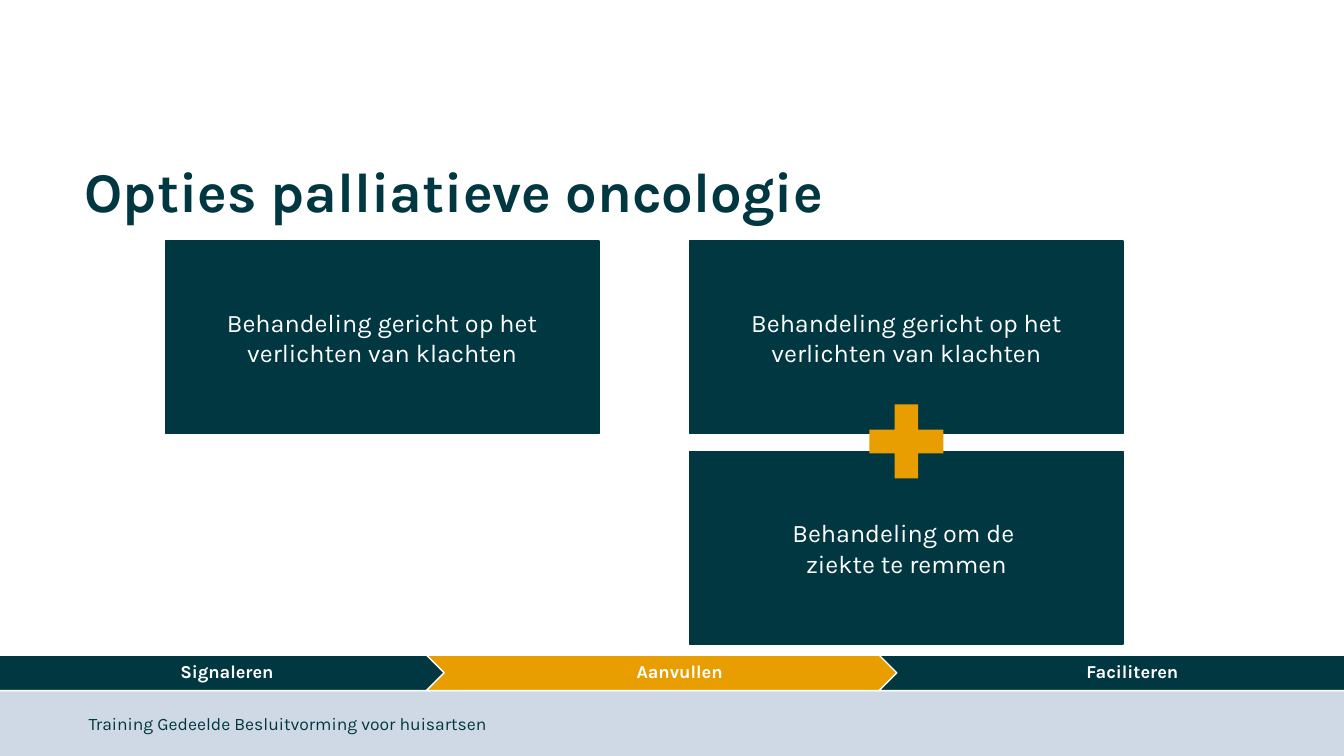
from pptx import Presentation
from pptx.dml.color import RGBColor
from pptx.enum.shapes import MSO_SHAPE
from pptx.enum.text import MSO_ANCHOR, PP_ALIGN
from pptx.util import Inches, Pt

RECT, PLUS, CHEVRON = MSO_SHAPE.RECTANGLE, MSO_SHAPE.MATH_PLUS, MSO_SHAPE.CHEVRON
LEFT, CENTER, MIDDLE = PP_ALIGN.LEFT, PP_ALIGN.CENTER, MSO_ANCHOR.MIDDLE
WIDE, HIGH = 13.33, 7.5
DARK, GOLD, PALE, WHITE, INK = "003741", "E89E00", "CED9E5", "FFFFFF", "00373E"
COLS, ROWS = (1.64, 6.84), (2.39, 4.48)
CARD_W, CARD_H = 4.3, 1.91
RELIEF = ["Behandeling gericht op het verlichten van klachten"]
SLOW = ["Behandeling om de ", "ziekte te remmen"]
STEPS = [("Signaleren", DARK), ("Aanvullen", GOLD), ("Faciliteren", DARK)]


def tint(color, code):
    """Set a colour from a hex string."""
    color.rgb = RGBColor.from_string(code)


def write(shape, lines, size, code, align=LEFT, bold=False, gap=1.0):
    """Put styled lines of text in a shape."""
    frame = shape.text_frame
    frame.word_wrap = True
    frame.vertical_anchor = MIDDLE
    frame.text = "\n".join(lines)
    for para in frame.paragraphs:
        para.alignment = align
        para.line_spacing = gap
        font = para.font
        font.name, font.size, font.bold = "Karla", Pt(size), bold
        tint(font.color, code)


def draw(slide, kind, box, fill, line=None):
    """Add a flat preset shape and return it."""
    shape = slide.shapes.add_shape(kind, *map(Inches, box))
    shape.shadow.inherit = False
    shape.fill.solid()
    tint(shape.fill.fore_color, fill)
    if line:
        tint(shape.line.color, line)
        shape.line.width = Pt(1)
    else:
        shape.line.fill.background()
    return shape


def head(slide, text):
    """Place and style the slide title."""
    title = slide.shapes.title
    title.left, title.top, title.width, title.height = map(
        Inches, (0.74, 1.2, 11.77, 1.45))
    write(title, [text], 40, DARK, bold=True, gap=0.9)


def card(slide, col, row, lines):
    """Add an option card at a grid place."""
    box = (COLS[col], ROWS[row], CARD_W, CARD_H)
    write(draw(slide, RECT, box, DARK, DARK), lines, 18, WHITE, CENTER)


def track(slide, top):
    """Add the row of step chevrons."""
    for i, (label, fill) in enumerate(STEPS):
        step = draw(slide, CHEVRON, (-0.26 + 4.49 * i, top, 4.98, 0.35), fill, WHITE)
        frame = step.text_frame
        frame.margin_left = Inches(0.06)
        frame.margin_right = frame.margin_top = frame.margin_bottom = Inches(0.02)
        write(step, [label], 13, WHITE, CENTER, True, 0.9)


def foot(slide, text):
    """Add the footer text."""
    box = slide.shapes.add_textbox(*map(Inches, (0.78, 6.98, 4.5, 0.4)))
    write(box, [text], 12.5, INK)


def main():
    """Build and save the slide."""
    deck = Presentation()
    deck.slide_width, deck.slide_height = Inches(WIDE), Inches(HIGH)
    slide = deck.slides.add_slide(deck.slide_layouts[5])
    draw(slide, RECT, (0, 6.86, WIDE, HIGH - 6.86), PALE)
    head(slide, "Opties palliatieve oncologie")
    card(slide, 0, 0, RELIEF)
    card(slide, 1, 0, RELIEF)
    card(slide, 1, 1, SLOW)
    draw(slide, PLUS, (COLS[1] + CARD_W / 2 - 0.5, 3.88, 1, 1), GOLD)
    track(slide, 6.5)
    foot(slide, "Training Gedeelde Besluitvorming voor huisartsen")
    deck.save("out.pptx")


if __name__ == "__main__":
    main()
